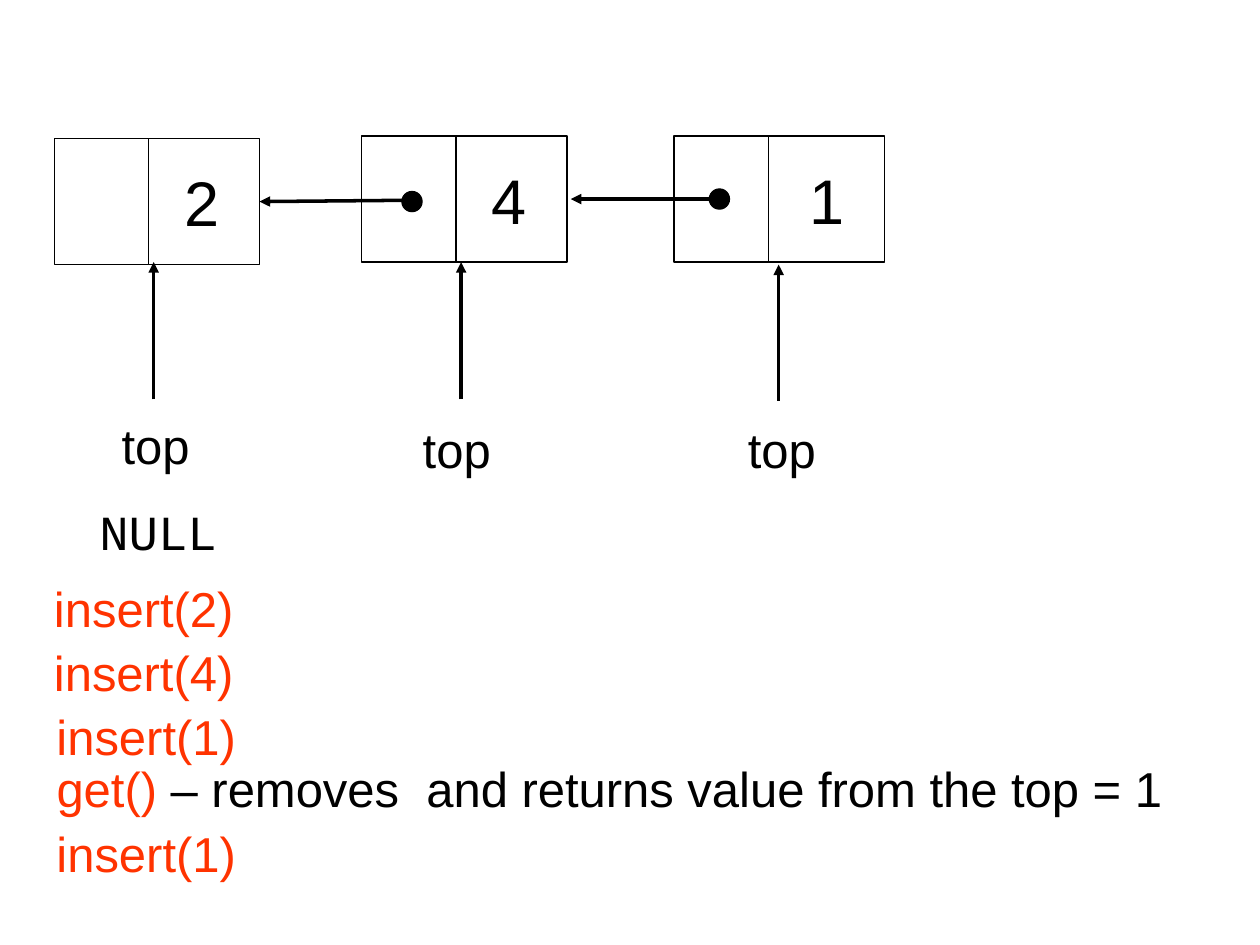
import pptx
import pptx.dml.color
import pptx.enum.shapes
import pptx.enum.text
import pptx.oxml
import pptx.oxml.ns
import pptx.util
from dataclasses import dataclass

PX = 9144  # EMU per px, 100 px to the inch


@dataclass(frozen=True)
class Theme:
    ink: str = "000000"
    paper: str = "FFFFFF"
    call: str = "FF3300"
    font: str = "Arial"
    code_font: str = "Courier New"
    value_size: int = 36
    text_size: int = 28
    border: float = 0.75
    arrow: float = 2


THEME = Theme()
SHAPE = pptx.enum.shapes.MSO_SHAPE
ALIGN = pptx.enum.text.PP_ALIGN
CELL_HEIGHT = 100
DOT_SIZE = 16


def px(*lengths):
    return [length * PX for length in lengths]


def color(value):
    return pptx.dml.color.RGBColor.from_string(value)


def set_font(font, size, value=THEME.ink, name=THEME.font):
    font.name = name
    font.size = pptx.util.Pt(size)
    font.color.rgb = color(value)


def add_box(shapes, kind, box, fill):
    shape = shapes.add_shape(kind, *px(*box))
    shape.shadow.inherit = False
    shape.fill.solid()
    shape.fill.fore_color.rgb = color(fill)
    shape.line.color.rgb = color(THEME.ink)
    shape.line.width = pptx.util.Pt(THEME.border)
    return shape


def add_node(slide, left, top, value_offset, value):
    """Draw a list node, link cell over value cell, and return the value cell."""
    shapes = slide.shapes.add_group_shape().shapes
    value_cell = add_box(shapes, SHAPE.RECTANGLE,
                         (left + value_offset, top, 92, CELL_HEIGHT), THEME.paper)
    frame = value_cell.text_frame
    frame.word_wrap = False
    frame.vertical_anchor = pptx.enum.text.MSO_ANCHOR.MIDDLE
    paragraph = frame.paragraphs[0]
    paragraph.text = value
    paragraph.alignment = ALIGN.CENTER
    set_font(paragraph.font, THEME.value_size)
    add_box(shapes, SHAPE.RECTANGLE, (left, top, 75, CELL_HEIGHT), THEME.paper)
    return value_cell


def add_arrow(shapes, tail, tip):
    """Draw an arrow that begins at its tail and points to its tip."""
    connector = shapes.add_connector(
        pptx.enum.shapes.MSO_CONNECTOR.STRAIGHT, *px(*tail, *tip))
    connector.line.color.rgb = color(THEME.ink)
    connector.line.width = pptx.util.Pt(THEME.arrow)
    line = connector.line._get_or_add_ln()
    pptx.oxml.ns.qn("a:tailEnd")
    head = pptx.oxml.parse_xml(
        f'<a:tailEnd {pptx.oxml.ns.nsdecls("a")} type="triangle"/>')
    line.append(head)
    connector._element.spPr.append(pptx.oxml.parse_xml(
        f'<a:effectLst {pptx.oxml.ns.nsdecls("a")}/>'))
    return connector


def add_link(slide, tail, tip, dot, target=None):
    """Draw a pointer with a dot at its start, joined to a target cell if given."""
    shapes = slide.shapes.add_group_shape().shapes
    connector = add_arrow(shapes, tail, tip)
    if target is not None:
        connector.end_connect(target, 3)
    add_box(shapes, SHAPE.OVAL, (*dot, DOT_SIZE, DOT_SIZE), THEME.ink)


def add_text(slide, box, runs, name=THEME.font, alignment=ALIGN.LEFT, wrap=True):
    """Add one line of text from (text, colour) runs."""
    frame = slide.shapes.add_textbox(*px(*box, 57)).text_frame
    frame.word_wrap = wrap
    frame.auto_size = pptx.enum.text.MSO_AUTO_SIZE.SHAPE_TO_FIT_TEXT
    paragraph = frame.paragraphs[0]
    paragraph.alignment = alignment
    set_font(paragraph.font, THEME.text_size, runs[0][1], name)
    for text, value in runs:
        run = paragraph.add_run()
        run.text = text
        if value != runs[0][1]:
            run.font.color.rgb = color(value)


def main():
    presentation = pptx.Presentation()
    presentation.slide_width, presentation.slide_height = px(1000, 750)
    slide = presentation.slides.add_slide(presentation.slide_layouts[6])

    # List nodes
    first_cell = add_node(slide, 43, 110, 71, "2")
    add_node(slide, 287, 108, 71, "4")
    add_node(slide, 535, 108, 75, "1")

    # Links to the previous node
    add_link(slide, (321, 159), (206, 160), (319, 152), first_cell)
    add_link(slide, (571, 158), (453, 158), (563, 150))

    # Top pointers and their labels
    for x, tail, tip, left, label_top in (
            (122, 317, 208, 86, 325),
            (366, 317, 208, 325, 328),
            (618, 318, 210, 583, 328)):
        add_arrow(slide.shapes, (x, tail), (x, tip))
        add_text(slide, (left, label_top, 75), [("top", THEME.ink)],
                 alignment=ALIGN.CENTER, wrap=False)
    add_text(slide, (67, 393, 117), [("NULL", THEME.ink)],
             THEME.code_font, ALIGN.CENTER)

    # Sequence of operations
    for left, top, width, call, note in (
            (33, 454, 191, "insert(2)", ""),
            (33, 505, 223, "insert(4)", ""),
            (35, 556, 166, "insert(1)", ""),
            (35, 597, 965, "get()", " – removes  and returns value from the top = 1"),
            (35, 649, 166, "insert(1)", "")):
        runs = [(call, THEME.call)]
        if note:
            runs.append((note, THEME.ink))
        add_text(slide, (left, top, width), runs)

    presentation.save("out.pptx")


if __name__ == "__main__":
    main()
